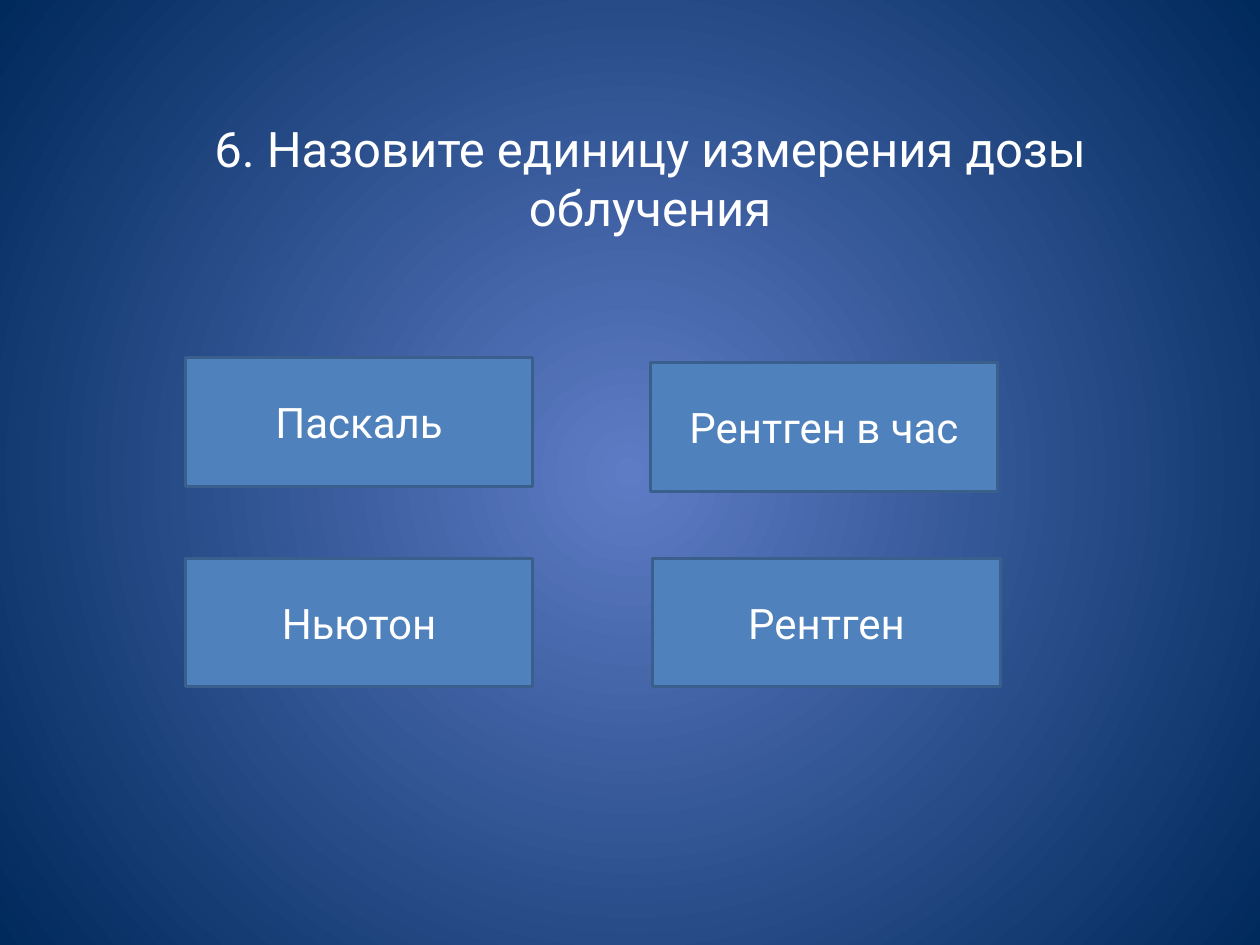
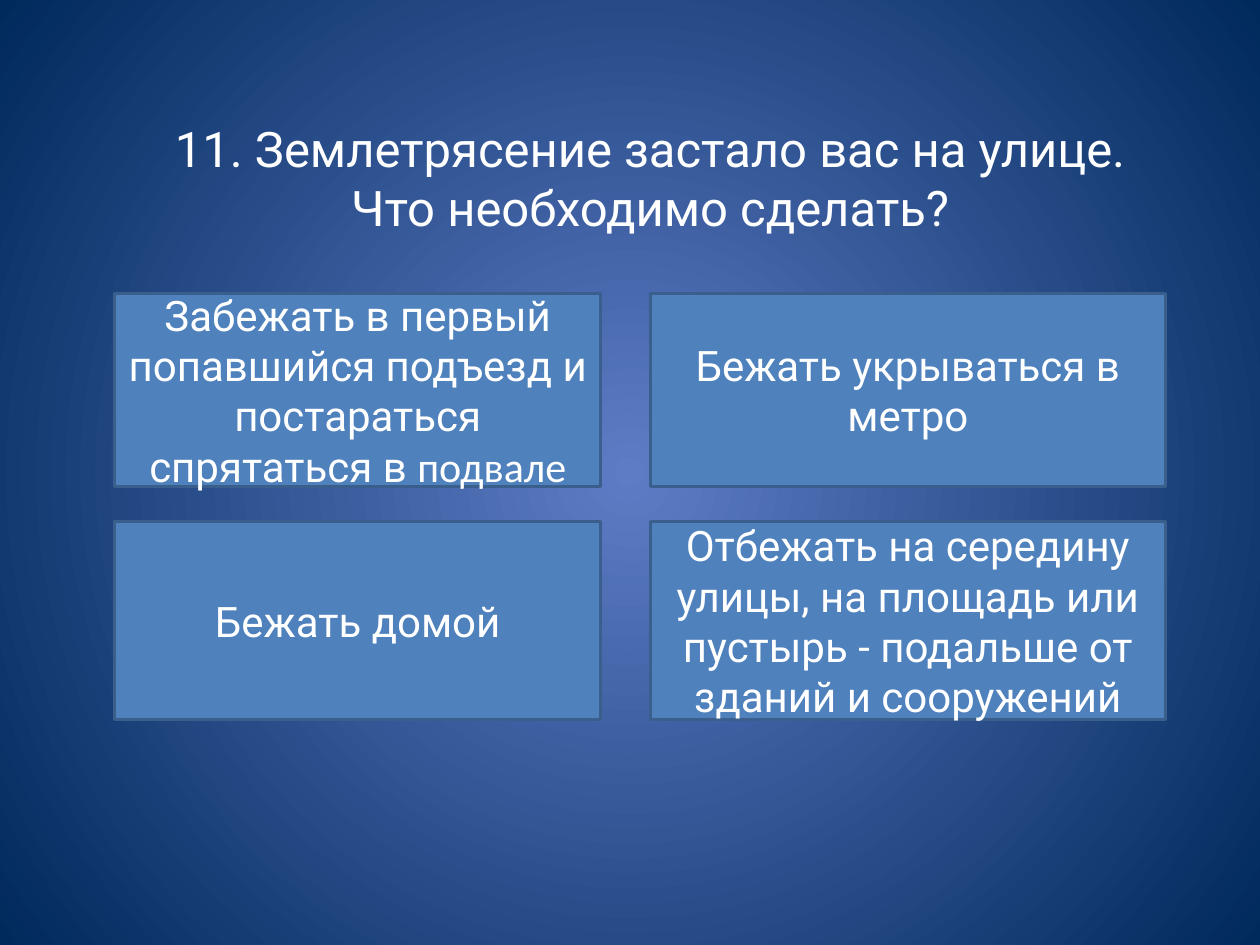
"""Build two quiz slides, each a question with four answer boxes."""
import dataclasses

import lxml.etree
import pptx
import pptx.dml.color
import pptx.enum.shapes
import pptx.enum.text
import pptx.oxml.ns
import pptx.util

EMU_PER_PX = 9144


@dataclasses.dataclass(frozen=True)
class Theme:
    """Colours, fonts and sizes shared by the slides."""
    glow: str = "5E7CC5"
    edge: str = "00295C"
    answer_fill: str = "4F81BD"
    answer_line: str = "3A5F8C"
    text: str = "FFFFFF"
    font: str = "Roboto"
    second_font: str = "Calibri"
    question_size: int = 28
    answer_size: int = 24
    line_width: float = 1.75


THEME = Theme()
QUESTION_AREA = (91, 60, 850, 161)

QUIZ = [
    ("6. Назовите единицу измерения дозы облучения", [
        ((147, 284, 276, 102), ["Паскаль"]),
        ((518, 443, 276, 102), ["Рентген"]),
        ((147, 443, 276, 102), ["Ньютон"]),
        ((516, 288, 276, 102), ["Рентген в час"]),
    ]),
    ("11. Землетрясение застало вас на улице. Что необходимо сделать?", [
        ((91, 233, 386, 153),
         ["Забежать в первый попавшийся подъезд и постараться спрятаться в ", "подвале"]),
        ((516, 414, 409, 157),
         ["Отбежать на середину улицы, на площадь или пустырь - подальше от зданий и сооружений"]),
        ((91, 414, 386, 157), ["Бежать домой"]),
        ((516, 233, 409, 153), ["Бежать укрываться в метро"]),
    ]),
]


def px(length):
    """Turn whole px into EMU."""
    return pptx.util.Emu(length * EMU_PER_PX)


def rgb(code):
    """Turn a hex code into a colour."""
    return pptx.dml.color.RGBColor.from_string(code)


def paint_background(slide):
    """Fill the slide with a circular glow around its centre."""
    fill = slide.background.fill
    fill.gradient()
    for stop, color, position in zip(fill.gradient_stops, (THEME.glow, THEME.edge), (0, 1)):
        stop.color.rgb = rgb(color)
        stop.position = position
    qn = pptx.oxml.ns.qn
    gradient = slide.element.find(".//" + qn("a:gradFill"))
    circle = lxml.etree.Element(qn("a:path"), {"path": "circle"})
    lxml.etree.SubElement(circle, qn("a:fillToRect"), dict.fromkeys("ltrb", "50000"))
    gradient.replace(gradient.find(qn("a:lin")), circle)


def write_centred(box, texts, size):
    """Write runs in the middle of a box; runs after the first use the second font."""
    frame = box.text_frame
    frame.word_wrap = True
    frame.vertical_anchor = pptx.enum.text.MSO_ANCHOR.MIDDLE
    para = frame.paragraphs[0]
    para.alignment = pptx.enum.text.PP_ALIGN.CENTER
    for index, text in enumerate(texts):
        span = para.add_run()
        span.text = text
        span.font.name = THEME.second_font if index else THEME.font
        span.font.size = pptx.util.Pt(size)
        span.font.color.rgb = rgb(THEME.text)


def add_question(slide, question):
    """Add the question text."""
    box = slide.shapes.add_textbox(*map(px, QUESTION_AREA))
    write_centred(box, [question], THEME.question_size)


def add_answer(slide, area, texts):
    """Add one answer box."""
    box = slide.shapes.add_shape(pptx.enum.shapes.MSO_SHAPE.RECTANGLE, *map(px, area))
    box.shadow.inherit = False
    box.fill.solid()
    box.fill.fore_color.rgb = rgb(THEME.answer_fill)
    box.line.color.rgb = rgb(THEME.answer_line)
    box.line.width = pptx.util.Pt(THEME.line_width)
    write_centred(box, texts, THEME.answer_size)


def main():
    """Build and save the deck."""
    deck = pptx.Presentation()
    deck.slide_width, deck.slide_height = px(1000), px(750)
    for question, answers in QUIZ:
        slide = deck.slides.add_slide(deck.slide_layouts[6])
        paint_background(slide)
        add_question(slide, question)
        for area, texts in answers:
            add_answer(slide, area, texts)
    deck.save("out.pptx")


if __name__ == "__main__":
    main()
